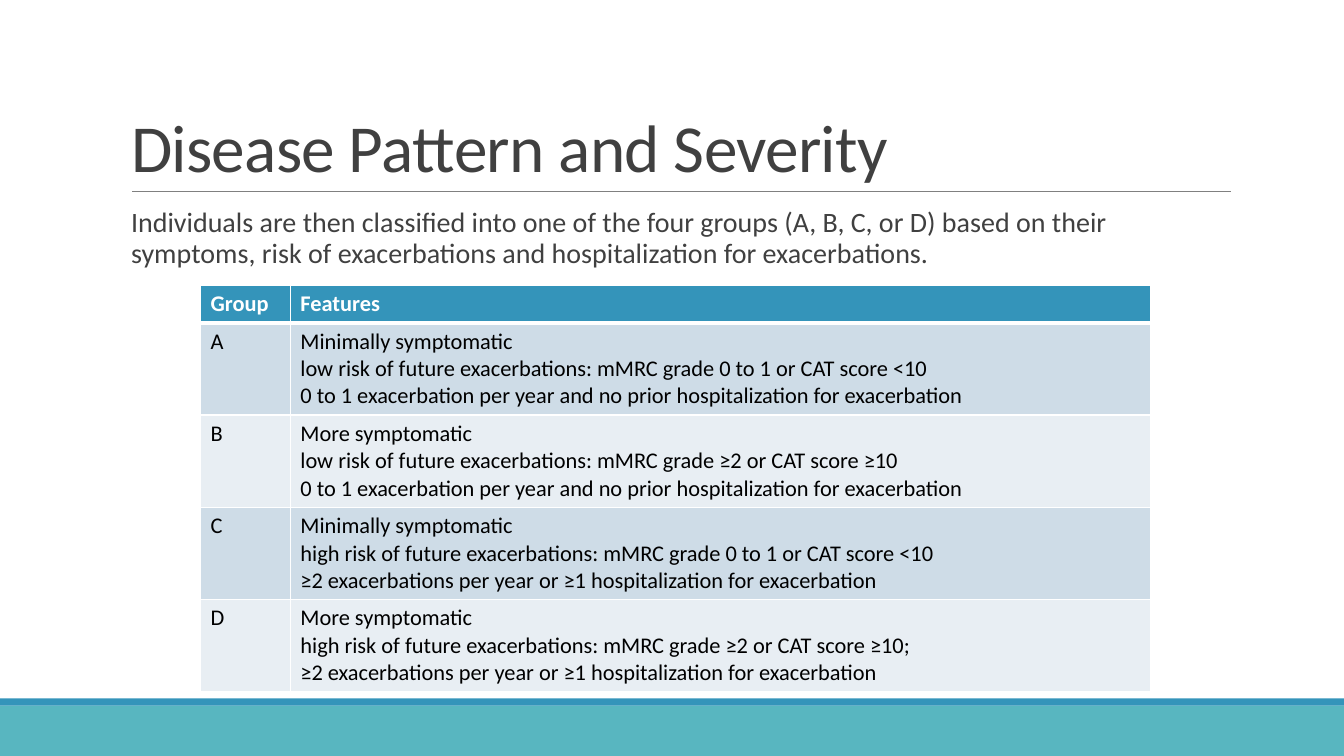
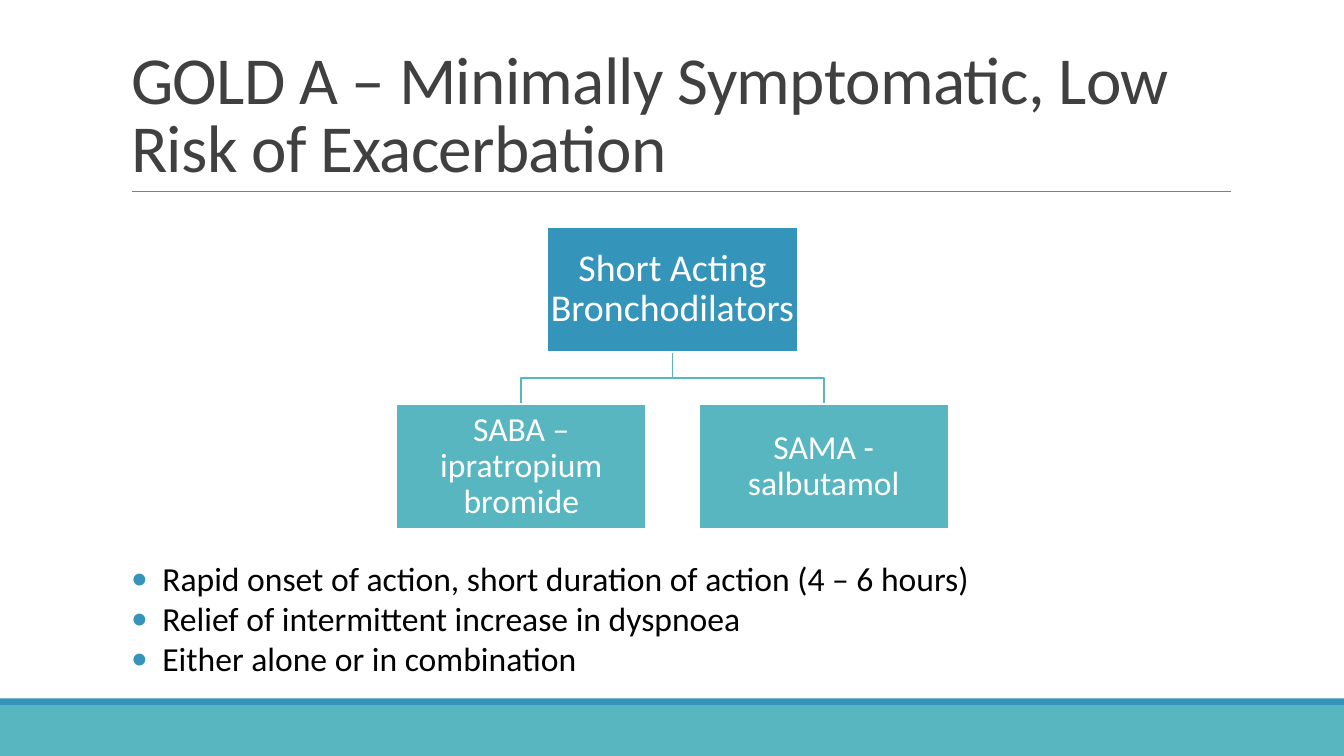
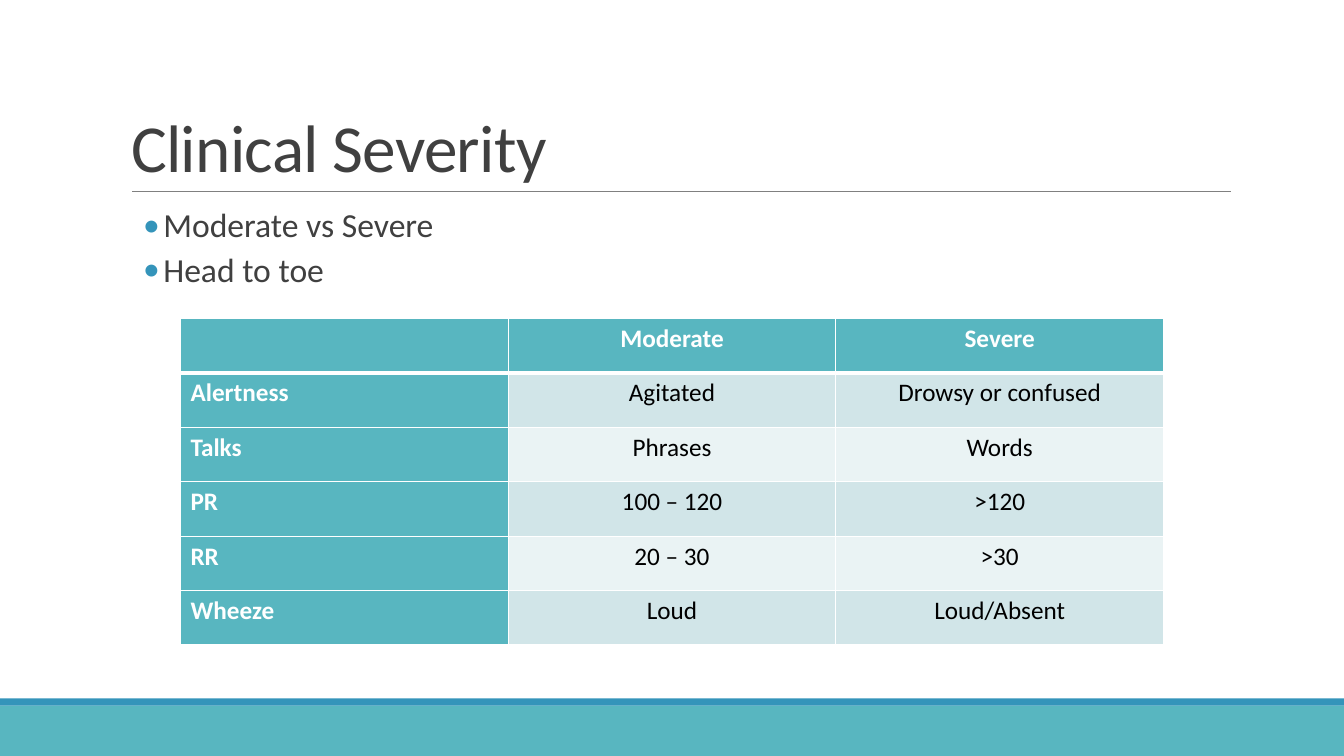
"""Build three slides on grading disease severity and its first treatment."""
from dataclasses import dataclass

from lxml.etree import SubElement as Sub
from pptx import Presentation
from pptx.dml.color import RGBColor as RGB
from pptx.enum.shapes import MSO_CONNECTOR as Link, MSO_SHAPE as Shape
from pptx.enum.text import MSO_ANCHOR as Anchor, MSO_AUTO_SIZE as Fit, PP_ALIGN as Align
from pptx.oxml import parse_xml
from pptx.oxml.ns import nsdecls, qn
from pptx.util import Inches, Pt


@dataclass(frozen=True)
class Theme:
    font: str = "Calibri"
    blue: str = "3494BA"
    teal: str = "58B6C0"
    gray: str = "404040"
    rule: str = "808080"
    white: str = "FFFFFF"
    black: str = "000000"
    blues: tuple = ("CEDCE7", "E8EEF3")
    teals: tuple = ("D1E5E8", "EAF3F4")
    title: int = 48
    root: int = 27
    list: int = 24
    lead: int = 20
    grid: int = 18
    small: int = 16


T = Theme()


def write(frame, lines, size, color, bold=False, mark=None, hang=(0, 0), **fmt):
    """Fill a text frame with one formatted paragraph per line."""
    frame.text = "\n".join(lines)
    for para in frame.paragraphs:
        for key, val in fmt.items():
            setattr(para, key, val)
        for key, val in {"name": T.font, "size": Pt(size), "bold": bold}.items():
            setattr(para.font, key, val)
        para.font.color.rgb = RGB.from_string(color)
        for run in para.runs:
            for key, val in {"name": T.font, "size": Pt(size), "bold": bold}.items():
                setattr(run.font, key, val)
            run.font.color.rgb = RGB.from_string(color)
        if mark:
            props = para._p.get_or_add_pPr()
            props.set("marL", str(Inches(hang[0])))
            props.set("indent", str(Inches(-hang[1])))
            Sub(Sub(props, qn("a:buClr")), qn("a:srgbClr"), val=T.blue)
            Sub(props, qn("a:buFont"), typeface=T.font)
            Sub(props, qn("a:buChar"), char=mark)


def grid(slide, left, top, cols, rows, data, size, head, bands, side=False, align=Align.LEFT):
    """Add a table with a header row, banded rows and white borders."""
    frame = slide.shapes.add_table(len(rows), len(cols), Inches(left), Inches(top),
                                   Inches(sum(cols)), Inches(sum(rows)))
    table = frame.table
    table.first_col = side
    for col, width in zip(table.columns, cols):
        col.width = Inches(width)
    for r, (row, high) in enumerate(zip(table.rows, rows)):
        row.height = Inches(high)
        for c, cell in enumerate(row.cells):
            first = side and c == 0
            key = r == 0 or first
            props = cell._tc.get_or_add_tcPr()
            for edge in "LRTB":
                thick = (r, edge) in ((0, "B"), (1, "T"))
                line = Sub(props, qn(f"a:ln{edge}"), w=str(Pt(3 if thick else 1)))
                Sub(Sub(line, qn("a:solidFill")), qn("a:srgbClr"), val=T.white)
            cell.fill.solid()
            cell.fill.fore_color.rgb = RGB.from_string(head if key else bands[(r - 1) % 2])
            write(cell.text_frame, data[r][c].split("\n"), size,
                  T.white if key else T.black, key,
                  alignment=Align.LEFT if first else align)


deck = Presentation()
deck.slide_width, deck.slide_height = Inches(13.33), Inches(7.5)
master = deck.slide_master

for hold, top, high in zip(master.placeholders, (0.31, 2.02), (1.59, 4.4)):
    for key, val in {"left": 1.2, "top": top, "width": 11, "height": high}.items():
        setattr(hold, key, Inches(val))
    hold.text_frame.auto_size = Fit.NONE
head, body = list(master.placeholders)[:2]
head.text_frame.vertical_anchor = Anchor.BOTTOM
body.text_frame.margin_left = body.text_frame.margin_right = 0
style = master.element.find(".//" + qn("p:titleStyle"))
style.replace(style.find(qn("a:lvl1pPr")), parse_xml(
    f'<a:lvl1pPr {nsdecls("a")} algn="l"><a:lnSpc><a:spcPct val="85000"/></a:lnSpc>'
    f'<a:spcBef><a:spcPts val="0"/></a:spcBef><a:buNone/>'
    f'<a:defRPr sz="{T.title * 100}" spc="-50"><a:solidFill><a:srgbClr val="{T.gray}"/>'
    f'</a:solidFill><a:latin typeface="{T.font}"/></a:defRPr></a:lvl1pPr>'))

titles = (
    "Disease Pattern and Severity",
    "GOLD A – Minimally Symptomatic, Low Risk of Exacerbation",
    "Clinical Severity",
)
slides = []
for title in titles:
    slide = deck.slides.add_slide(deck.slide_layouts[1])
    slide.shapes.title.text = title
    slides.append(slide)
groups, gold, signs = slides

decor = []
for top, high, color in ((7, 0.5, T.teal), (6.93, 0.07, T.blue)):
    band = groups.shapes.add_shape(Shape.RECTANGLE, 0, Inches(top),
                                   deck.slide_width, Inches(high))
    band.shadow.inherit = False
    band.fill.solid()
    band.fill.fore_color.rgb = RGB.from_string(color)
    band.line.fill.background()
    decor.append(band)
rule = groups.shapes.add_connector(Link.STRAIGHT, Inches(1.31), Inches(1.9),
                                   Inches(12.21), Inches(1.9))
rule.line.color.rgb = RGB.from_string(T.rule)
rule.line.width = Pt(0.5)
Sub(rule.element.spPr, qn("a:effectLst"))
decor.append(rule)
for n, item in enumerate(decor):
    item.element.xpath(".//p:cNvPr")[0].set("id", str(20 + n))
    master.shapes.element.insert(2 + n, item.element)

write(groups.placeholders[1].text_frame,
      ["Individuals are then classified into one of the four groups (A, B, C, or D) "
       "based on their symptoms, risk of exacerbations and hospitalization for exacerbations."],
      T.lead, T.gray, mark=" ", hang=(0.1, 0.1),
      line_spacing=0.9, space_before=Pt(12), space_after=Pt(2))
mild, more = "Minimally symptomatic", "More symptomatic"
rare = "0 to 1 exacerbation per year and no prior hospitalization for exacerbation"
often = "≥2 exacerbations per year or ≥1 hospitalization for exacerbation"
risk = "risk of future exacerbations: mMRC grade"
low, high = "0 to 1 or CAT score <10", "≥2 or CAT score ≥10"
grid(groups, 1.99, 2.83, (0.89, 8.53), (0.35,) + (0.87,) * 4, (
    ("Group", "Features"),
    ("A", f"{mild}\nlow {risk} {low}\n{rare}"),
    ("B", f"{more}\nlow {risk} {high}\n{rare}"),
    ("C", f"{mild}\nhigh {risk} {low}\n{often}"),
    ("D", f"{more}\nhigh {risk} {high};\n{often}"),
), T.small, T.blue, T.blues)

mid, step, wide, tall = 6.67, 1.5, 2.48, 1.24
upper, lower = 2.25, 4.01
base = upper + tall
bend = (base + lower) / 2
for end in (mid + step, mid - step):
    pen = gold.shapes.build_freeform(Inches(mid), Inches(base))
    pen.add_line_segments([(Inches(x), Inches(y)) for x, y in
                           ((mid, bend), (end, bend), (end, lower))], close=False)
    branch = pen.convert_to_shape()
    branch.shadow.inherit = False
    branch.fill.background()
    branch.line.color.rgb = RGB.from_string(T.teal)
    branch.line.width = Pt(1.25)
for text, x, y, color, size in (
    ("Short Acting Bronchodilators", mid, upper, T.blue, T.root),
    ("SABA – ipratropium bromide", mid - step, lower, T.teal, T.list),
    ("SAMA - salbutamol", mid + step, lower, T.teal, T.list),
):
    box = gold.shapes.add_shape(Shape.RECTANGLE, Inches(x - wide / 2), Inches(y),
                                Inches(wide), Inches(tall))
    box.shadow.inherit = False
    box.fill.solid()
    box.fill.fore_color.rgb = RGB.from_string(color)
    box.line.color.rgb = RGB.from_string(T.white)
    box.line.width = Pt(1.25)
    for side in ("left", "top", "right", "bottom"):
        setattr(box.text_frame, f"margin_{side}", Inches(0.02))
    box.text_frame.vertical_anchor = Anchor.MIDDLE
    write(box.text_frame, [text], size, T.white, alignment=Align.CENTER, line_spacing=0.9)
notes = gold.placeholders[1]
for key, val in {"left": 1.3, "top": 5.48, "width": 10.8, "height": 1.4}.items():
    setattr(notes, key, Inches(val))
write(notes.text_frame, [
    "Rapid onset of action, short duration of action (4 – 6 hours)",
    "Relief of intermittent increase in dyspnoea",
    "Either alone or in combination",
], T.list, T.black, mark="•", hang=(0.31, 0.31), space_before=Pt(0))

write(signs.placeholders[1].text_frame, ["Moderate vs Severe", "Head to toe"],
      T.list, T.gray, mark="•", hang=(0.42, 0.2), level=1,
      line_spacing=0.9, space_before=Pt(2), space_after=Pt(4))
grid(signs, 1.79, 3.16, (3.25,) * 3, (0.54,) * 6, (
    ("", "Moderate", "Severe"),
    ("Alertness", "Agitated", "Drowsy or confused"),
    ("Talks", "Phrases", "Words"),
    ("PR", "100 – 120", ">120"),
    ("RR", "20 – 30", ">30"),
    ("Wheeze", "Loud", "Loud/Absent"),
), T.grid, T.teal, T.teals, side=True, align=Align.CENTER)

deck.save("out.pptx")
